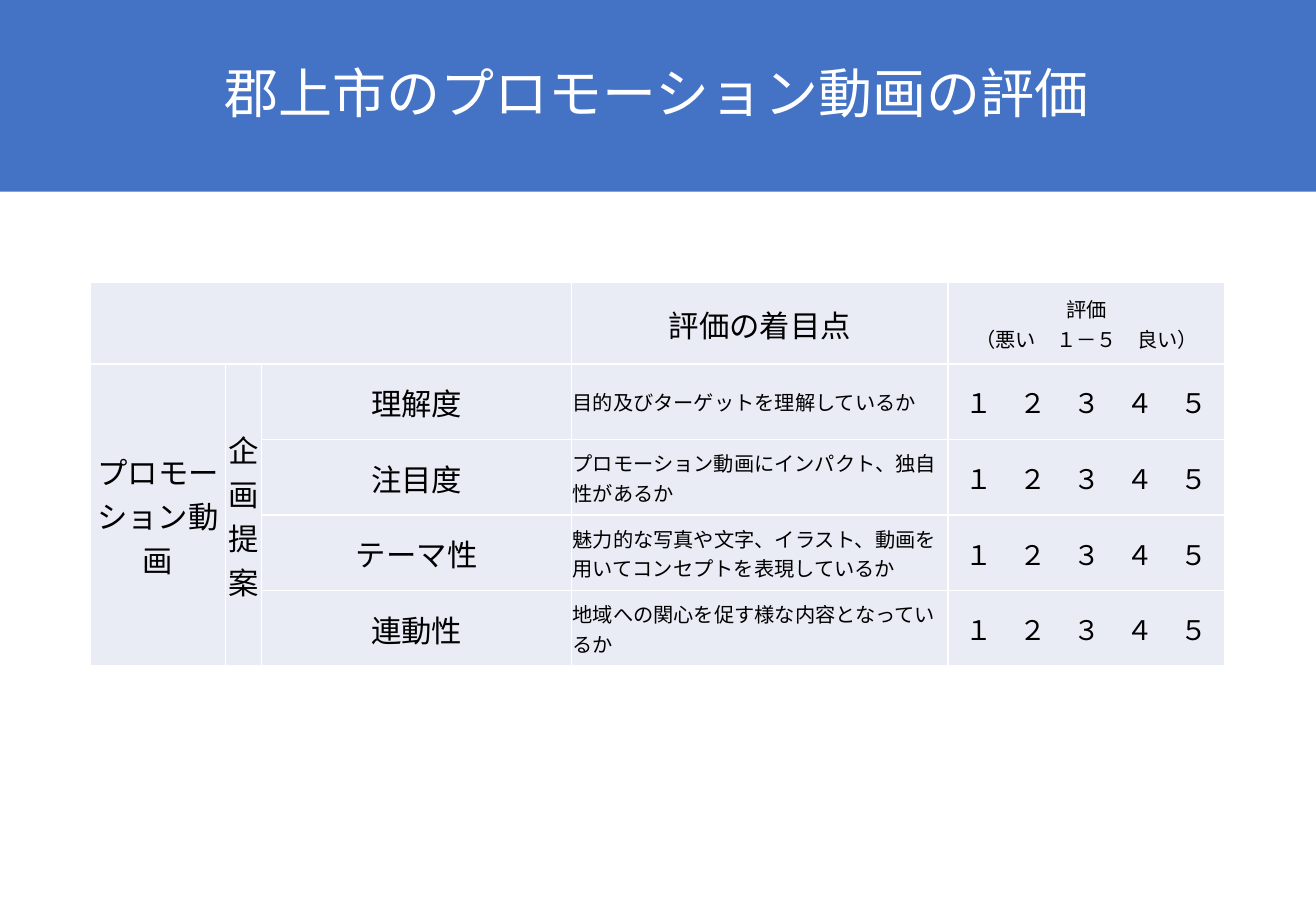
"""Build the rating sheet slide for the city promotion video."""
from lxml import etree
from pptx import Presentation
from pptx.dml.color import RGBColor
from pptx.enum.text import MSO_ANCHOR, PP_ALIGN
from pptx.oxml.ns import qn
from pptx.util import Cm, Pt

MIDDLE = MSO_ANCHOR.MIDDLE
LEFT, CENTER = PP_ALIGN.LEFT, PP_ALIGN.CENTER
FONT = "Noto Sans CJK JP"
COLORS = {"band": "4472C4", "cell": "E9EBF5", "white": "FFFFFF", "ink": "000000"}
SCALE = "１　２　３　４　５"
ITEMS = [
    ("理解度", "目的及びターゲットを理解しているか"),
    ("注目度", "プロモーション動画にインパクト、独自性があるか"),
    ("テーマ性", "魅力的な写真や文字、イラスト、動画を用いてコンセプトを表現しているか"),
    ("連動性", "地域への関心を促す様な内容となっているか"),
]


def write(frame, text, size=18, color="ink", align=CENTER, space=None):
    frame.text = text
    for para in frame.paragraphs:
        para.alignment = align
        para.line_spacing = space
        for run in para.runs:
            run.font.size = Pt(size)
            run.font.name = FONT
            run.font.color.rgb = RGBColor.from_string(COLORS[color])
            east = etree.SubElement(run.font._element, qn("a:ea"))
            east.set("typeface", FONT)


def edge(cell):
    props = cell._tc.get_or_add_tcPr()
    for i, side in enumerate(("lnL", "lnR", "lnT", "lnB")):
        line = etree.Element(qn(f"a:{side}"), w=str(Pt(1)))
        fill = etree.SubElement(line, qn("a:solidFill"))
        etree.SubElement(fill, qn("a:srgbClr"), val=COLORS["white"])
        props.insert(i, line)


deck = Presentation()
deck.slide_width, deck.slide_height = Cm(27.51), Cm(19.05)
slide = deck.slides.add_slide(deck.slide_layouts[5])

title = slide.shapes.title
title.left, title.top, title.width, title.height = Cm(-0.05), Cm(0), Cm(27.56), Cm(4.01)
title.fill.solid()
title.fill.fore_color.rgb = RGBColor.from_string(COLORS["band"])
title.text_frame.vertical_anchor = MIDDLE
write(title.text_frame, "郡上市のプロモーション動画の評価", size=32, color="white", space=0.9)

table = slide.shapes.add_table(5, 5, Cm(1.89), Cm(5.91), Cm(23.72), Cm(8.02)).table
table.first_row = table.horz_banding = False
for col, width in zip(table.columns, (2.82, 0.76, 6.48, 7.87, 5.79)):
    col.width = Cm(width)
for row, height in zip(table.rows, (1.7, 1.58, 1.58, 1.58, 1.58)):
    row.height = Cm(height)

for cell in table.iter_cells():
    cell.fill.solid()
    cell.fill.fore_color.rgb = RGBColor.from_string(COLORS["cell"])
    cell.vertical_anchor = MIDDLE
    cell.margin_left = cell.margin_right = cell.margin_top = Cm(0.02)
    cell.margin_bottom = Cm(0)
    edge(cell)

table.cell(0, 0).merge(table.cell(0, 2))
write(table.cell(0, 3).text_frame, "評価の着目点")
write(table.cell(0, 4).text_frame, "評価\n（悪い　１－５　良い）", size=12)

for c, group in enumerate(("プロモーション動画", "企画提案")):
    cell = table.cell(1, c)
    cell.merge(table.cell(4, c))
    cell._tc.get_or_add_tcPr().set("vert", "eaVert")
    write(cell.text_frame, group)

for r, (name, point) in enumerate(ITEMS, 1):
    write(table.cell(r, 2).text_frame, name)
    write(table.cell(r, 3).text_frame, point, size=12, align=LEFT)
    write(table.cell(r, 4).text_frame, SCALE, size=16)

deck.save("out.pptx")
